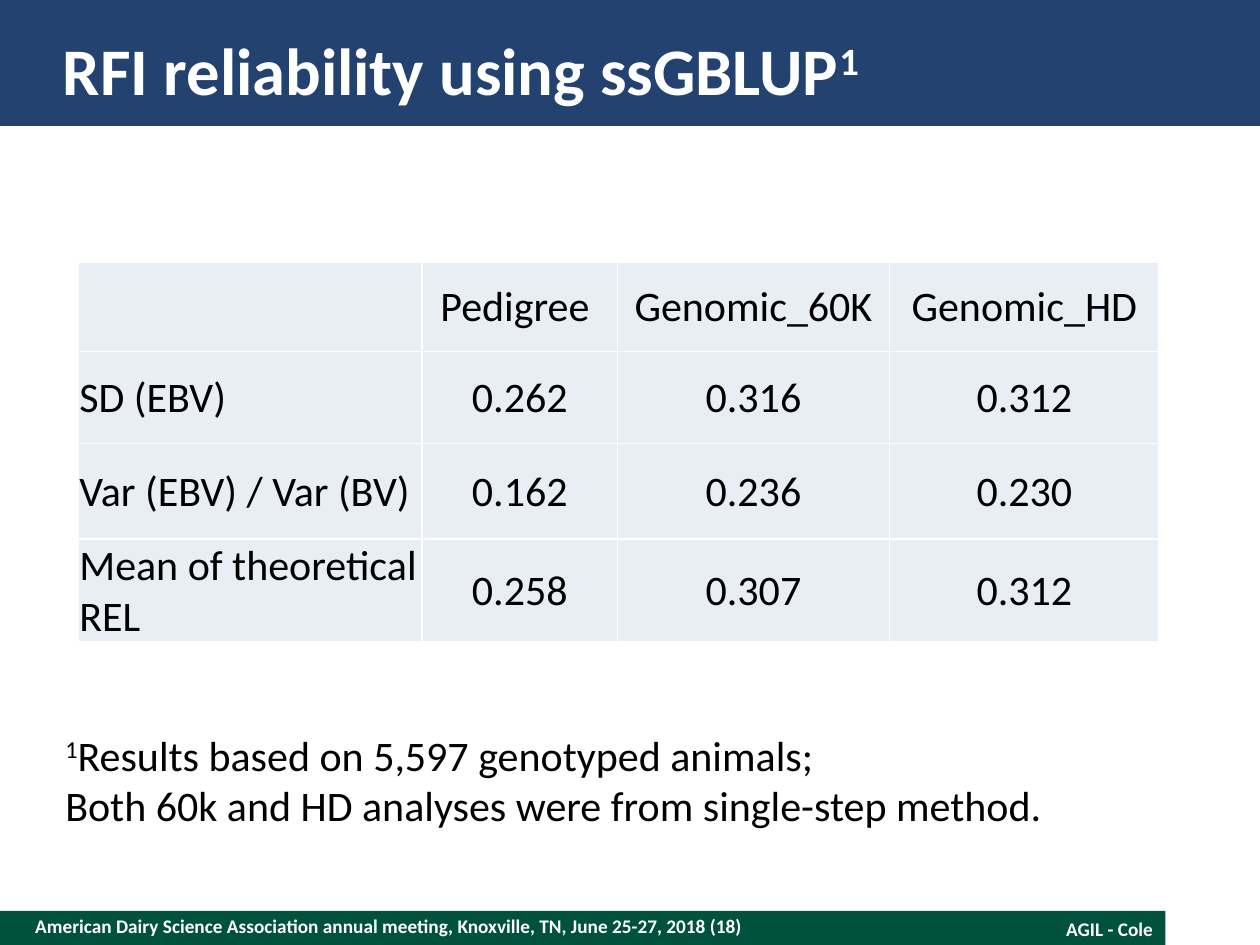
from pptx import Presentation
from pptx.dml.color import RGBColor
from pptx.enum.shapes import MSO_SHAPE
from pptx.enum.text import MSO_ANCHOR, PP_ALIGN
from pptx.oxml import parse_xml
from pptx.oxml.ns import nsdecls
from pptx.util import Inches, Pt

NAVY, GREEN, WHITE, BLACK, PALE = "244270", "00523C", "FFFFFF", "000000", "E9EDF4"
COL_WIDTHS = [2.73, 1.55, 2.16, 2.14]
ROW_HEIGHTS = [0.71, 0.73, 0.76, 0.81]
ROWS = [
    ["", "Pedigree ", "Genomic_60K", "Genomic_HD"],
    ["SD (EBV)", "0.262", "0.316", "0.312"],
    ["Var (EBV) / Var (BV)", "0.162", "0.236", "0.230"],
    ["Mean of theoretical REL", "0.258", "0.307", "0.312"],
]


def rgb(color):
    return RGBColor.from_string(color)


def set_font(p, size, color, bold=False):
    p.font.name = "Calibri"
    p.font.size = Pt(size)
    p.font.bold = bold
    p.font.color.rgb = rgb(color)


def add_superscript(p, text):
    r = p.add_run()
    r.text = text
    r._r.get_or_add_rPr().set("baseline", "30000")


def add_bar(s, box, color):
    bar = s.shapes.add_shape(MSO_SHAPE.RECTANGLE, *map(Inches, box))
    bar.shadow.inherit = False
    bar.fill.solid()
    bar.fill.fore_color.rgb = rgb(color)
    bar.line.fill.background()


def add_box(s, box, anchor=MSO_ANCHOR.TOP, inset=True, wrap=True):
    tf = s.shapes.add_textbox(*map(Inches, box)).text_frame
    tf.word_wrap = wrap
    tf.vertical_anchor = anchor
    if not inset:
        tf.margin_left = tf.margin_top = tf.margin_right = tf.margin_bottom = 0
    return tf


def add_header(s, box):
    left, top, width, height = box
    add_bar(s, box, NAVY)
    title_box = (left + 0.5, top + 0.2, width - 0.8, height - 0.3)
    p = add_box(s, title_box, MSO_ANCHOR.MIDDLE, inset=False).paragraphs[0]
    p.add_run().text = "RFI reliability using ssGBLUP"
    add_superscript(p, "1")
    set_font(p, 38, WHITE, True)


def add_footer(s, box):
    left, top, width, height = box
    add_bar(s, box, GREEN)
    meeting_box = (left + 0.28, top - 0.03, 7.7, 0.3)
    p = add_box(s, meeting_box, MSO_ANCHOR.MIDDLE, inset=False).paragraphs[0]
    p.text = "American Dairy Science Association annual meeting, Knoxville, TN, June 25-27, 2018 (18)"
    set_font(p, 11, WHITE, True)
    p = add_box(s, (left + width - 2, top, 2, 0.29)).paragraphs[0]
    p.text = "AGIL - Cole"
    p.alignment = PP_ALIGN.RIGHT
    set_font(p, 11, WHITE, True)


def add_borders(cell):
    tcPr = cell._tc.get_or_add_tcPr()
    for i, side in enumerate(("lnL", "lnR", "lnT", "lnB")):
        tcPr.insert(i, parse_xml(
            f'<a:{side} {nsdecls("a")} w="12700"><a:solidFill>'
            f'<a:srgbClr val="{WHITE}"/></a:solidFill></a:{side}>'))


def add_reliability_table(s, box):
    table = s.shapes.add_table(len(ROWS), len(COL_WIDTHS), *map(Inches, box)).table
    for column, width in zip(table.columns, COL_WIDTHS):
        column.width = Inches(width)
    for row, height, texts in zip(table.rows, ROW_HEIGHTS, ROWS):
        row.height = Inches(height)
        for i, (cell, text) in enumerate(zip(row.cells, texts)):
            cell.margin_left = cell.margin_right = cell.margin_top = Inches(0.01)
            cell.margin_bottom = 0
            cell.vertical_anchor = MSO_ANCHOR.MIDDLE
            cell.fill.solid()
            cell.fill.fore_color.rgb = rgb(PALE)
            add_borders(cell)
            p = cell.text_frame.paragraphs[0]
            p.text = text
            p.alignment = PP_ALIGN.CENTER if i else PP_ALIGN.LEFT
            set_font(p, 24, BLACK)


def add_footnote(s, box):
    tf = add_box(s, box, wrap=False)
    p = tf.paragraphs[0]
    add_superscript(p, "1")
    p.add_run().text = "Results based on 5,597 genotyped animals;"
    tf.add_paragraph().text = "Both 60k and HD analyses were from single-step method."
    for p in tf.paragraphs:
        p.alignment = PP_ALIGN.LEFT
        set_font(p, 24, BLACK)


def main():
    prs = Presentation()
    prs.slide_width, prs.slide_height = Inches(10), Inches(7.5)
    s = prs.slides.add_slide(prs.slide_layouts[6])
    add_footer(s, (0, 7.23, 9.25, 0.27))
    add_header(s, (0, 0, 10, 1))
    add_footnote(s, (0.42, 5.74, 8.5, 0.91))
    add_reliability_table(s, (0.62, 2.08, sum(COL_WIDTHS), sum(ROW_HEIGHTS)))
    prs.save("out.pptx")


if __name__ == "__main__":
    main()
